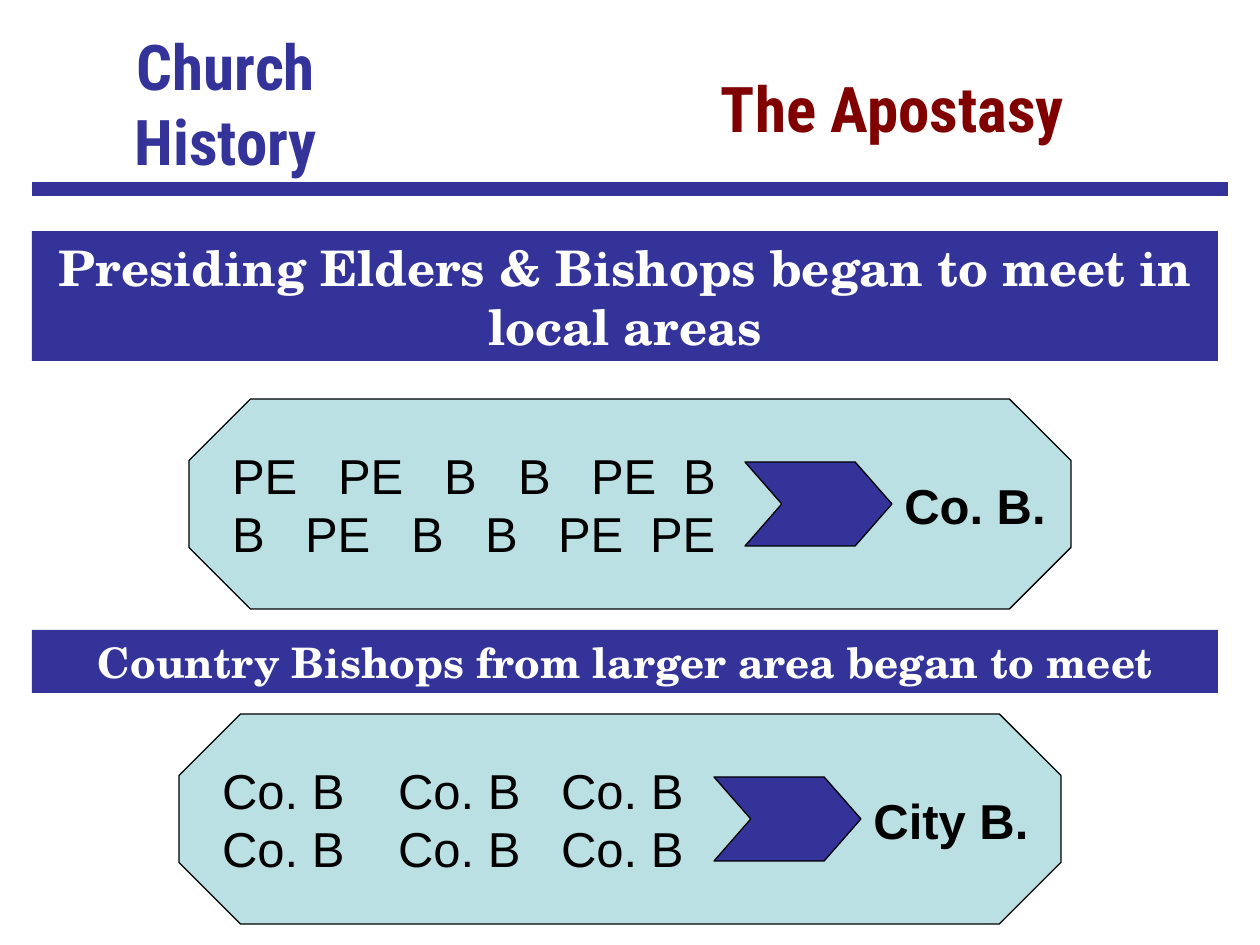
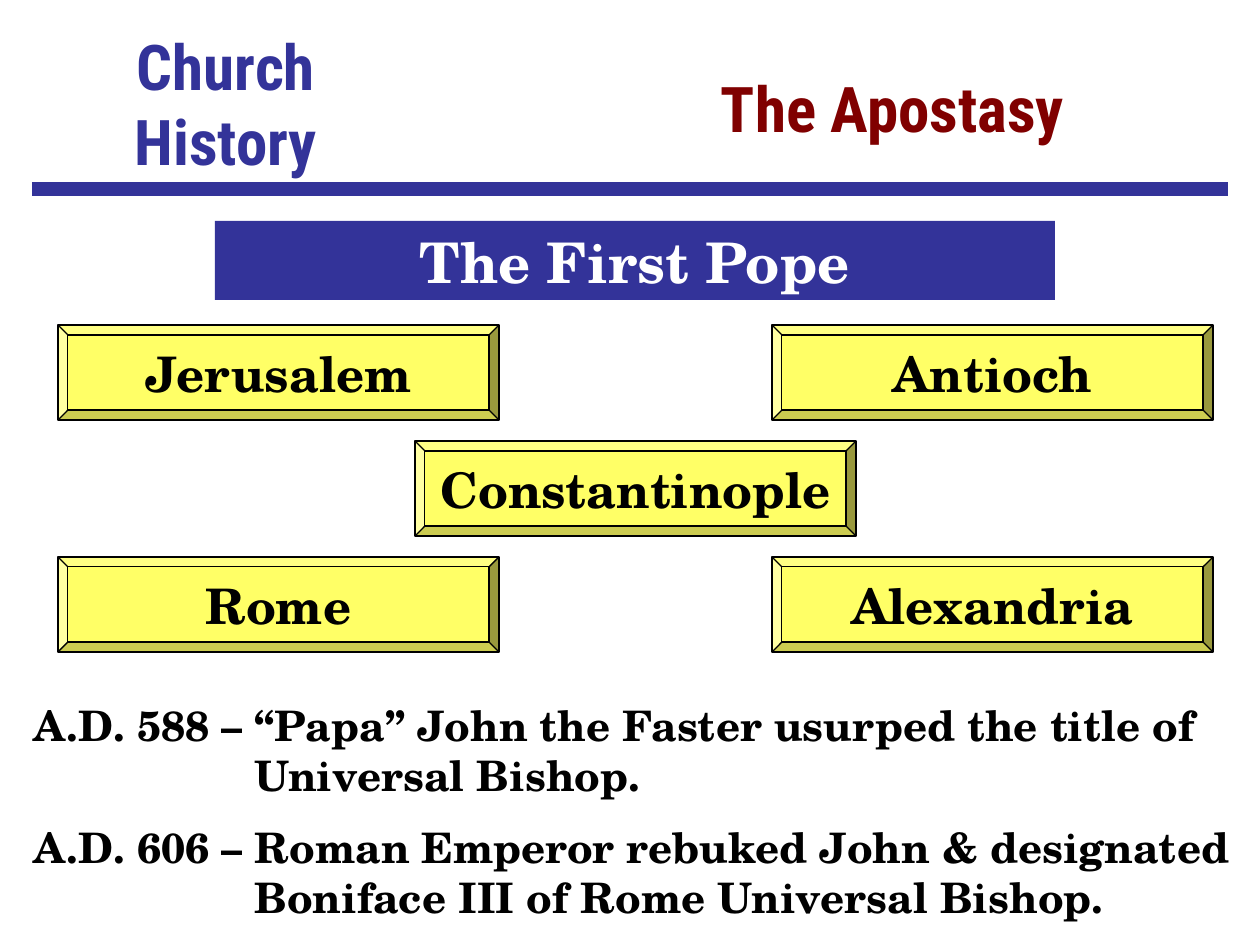
from lxml import etree
from pptx import Presentation
from pptx.dml.color import RGBColor
from pptx.enum.shapes import MSO_CONNECTOR, MSO_SHAPE
from pptx.enum.text import MSO_ANCHOR, MSO_AUTO_SIZE, PP_ALIGN
from pptx.oxml.ns import qn
from pptx.util import Pt

PX = 914400 / 126
COLORS = {
    "blue": "333399", "maroon": "800000", "aqua": "BBE0E3",
    "yellow": "FFFF66", "black": "000000", "white": "FFFFFF",
}
HEADING, SERIF, SANS = "Roboto Condensed", "TeX Gyre Schola", "Arial"


def emu(*lengths):
    """Turn lengths in px into EMU."""
    return [round(length * PX) for length in lengths]


def color(name):
    """Look up a colour by name."""
    return RGBColor.from_string(COLORS[name])


def write(holder, lines, font, size, ink, bold=True, align=PP_ALIGN.CENTER,
          anchor=MSO_ANCHOR.TOP, wrap=True):
    """Fill a shape with evenly formatted paragraphs."""
    frame = holder.text_frame
    frame.auto_size = MSO_AUTO_SIZE.NONE
    frame.word_wrap = wrap
    frame.vertical_anchor = anchor
    frame.text = "\n".join(lines)
    for paragraph in frame.paragraphs:
        paragraph.alignment = align
        paragraph.space_before = Pt(0)
        paragraph.font.name = font
        paragraph.font.size = Pt(size)
        paragraph.font.bold = bold
        paragraph.font.color.rgb = color(ink)
    return frame


def place(holder, box):
    """Move a placeholder to a box."""
    holder.left, holder.top, holder.width, holder.height = emu(*box)


def add_block(slide, kind, box, fill, outlined=True, adjust=None):
    """Add a flat preset shape."""
    block = slide.shapes.add_shape(kind, *emu(*box))
    block.shadow.inherit = False
    block.fill.solid()
    block.fill.fore_color.rgb = color(fill)
    if outlined:
        block.line.color.rgb = color("black")
        block.line.width = Pt(0.75)
    else:
        block.line.fill.background()
    if adjust is not None:
        block.adjustments[0] = adjust
    return block


def add_header(slide):
    """Add the series name, the title and the rule below them."""
    series = slide.shapes.add_textbox(*emu(32, 21, 388, 136))
    write(series, ["Church", "History"], HEADING, 36, "blue", wrap=False)
    place(slide.shapes.title, (567, 63, 651, 90))
    write(slide.shapes.title, ["The Apostasy"], HEADING, 36, "maroon", wrap=False)
    rule = slide.shapes.add_connector(MSO_CONNECTOR.STRAIGHT, *emu(32, 189, 1228, 189))
    rule.line.color.rgb = color("blue")
    rule.line.width = Pt(8)
    etree.SubElement(rule._element.spPr, qn("a:effectLst"))


def add_banner(slide, box, statement, size):
    """Add a blue band with a white statement."""
    banner = add_block(slide, MSO_SHAPE.RECTANGLE, box, "blue", outlined=False)
    write(banner, [statement], SERIF, size, "white")


def set_tabs(paragraph, stops):
    """Give a paragraph left tab stops in px."""
    properties = paragraph._p.get_or_add_pPr()
    tabs = etree.Element(qn("a:tabLst"))
    for position in emu(*stops):
        etree.SubElement(tabs, qn("a:tab"), pos=str(position), algn="l")
    properties.find(qn("a:defRPr")).addprevious(tabs)


def add_council(slide, left, top, rows, stops, arrow_offset, leader, leader_width):
    """Add an octagon of members with an arrow to their leader."""
    council = add_block(slide, MSO_SHAPE.OCTAGON, (left, top, 882, 210), "aqua", adjust=0.293)
    members = write(council, ["\t".join(row.split(",")) for row in rows], SANS, 28,
                    "black", bold=False, align=PP_ALIGN.LEFT, anchor=MSO_ANCHOR.MIDDLE)
    for paragraph, row_stops in zip(members.paragraphs, stops):
        set_tabs(paragraph, row_stops)
    arrow_left = left + arrow_offset
    add_block(slide, MSO_SHAPE.CHEVRON, (arrow_left, top + 63, 147, 84), "blue", adjust=0.438)
    label = slide.shapes.add_textbox(*emu(arrow_left + 147, top + 70, leader_width, 72))
    write(label, [leader], SANS, 28, "black", align=PP_ALIGN.LEFT, wrap=False)


def add_cities(slide, left, top):
    """Add the five cities on a three by three grid."""
    cities = [("Jerusalem", 0, 0), ("Antioch", 2, 0), ("Constantinople", 1, 1),
              ("Rome", 0, 2), ("Alexandria", 2, 2)]
    for city, column, row in cities:
        box = (left + 357 * column, top + 116 * row, 441, 95)
        plaque = add_block(slide, MSO_SHAPE.BEVEL, box, "yellow", adjust=0.104)
        write(plaque, [city], SERIF, 28, "black", anchor=MSO_ANCHOR.MIDDLE, wrap=False)


def add_events(slide, box, events):
    """Place dated events in the body with hanging indents."""
    body = slide.placeholders[1]
    place(body, box)
    frame = write(body, events, SERIF, 24, "black", align=PP_ALIGN.LEFT)
    indent = emu(221)[0]
    for paragraph in frame.paragraphs:
        properties = paragraph._p.get_or_add_pPr()
        properties.set("marL", str(indent))
        properties.set("indent", str(-indent))
        properties.find(qn("a:defRPr")).addprevious(etree.Element(qn("a:buNone")))
    for paragraph in frame.paragraphs[1:]:
        paragraph.space_before = Pt(12)


def build_councils(deck):
    """Build the slide on local and wider meetings."""
    slide = deck.slides.add_slide(deck.slide_layouts[5])
    add_header(slide)
    add_banner(slide, (32, 231, 1186, 130),
               "Presiding Elders & Bishops began to meet in local areas", 28)
    add_council(slide, 189, 399, ["PE,PE,B,B,PE,B", "B,PE,B,B,PE,PE"],
                [(106, 212, 286, 359, 451), (73, 179, 253, 326, 418)], 556, "Co. B.", 166)
    add_banner(slide, (32, 630, 1186, 63), "Country Bishops from larger area began to meet", 24)
    add_council(slide, 179, 714, ["Co. B,Co. B,Co. B"] * 2, [(176, 339)] * 2,
                535, "City B.", 180)


def build_first_pope(deck):
    """Build the slide on the first pope."""
    slide = deck.slides.add_slide(deck.slide_layouts[1])
    add_header(slide)
    add_banner(slide, (215, 221, 840, 79), "The First Pope", 32)
    add_events(slide, (21, 693, 1229, 239), [
        "A.D. 588 – “Papa” John the Faster usurped the title of Universal Bishop.",
        "A.D. 606 – Roman Emperor rebuked John & designated Boniface III of Rome "
        "Universal Bishop.",
    ])
    add_cities(slide, 58, 325)


def main():
    """Build and save the deck."""
    deck = Presentation()
    deck.slide_width, deck.slide_height = emu(1260, 945)
    build_councils(deck)
    build_first_pope(deck)
    deck.save("out.pptx")


if __name__ == "__main__":
    main()
